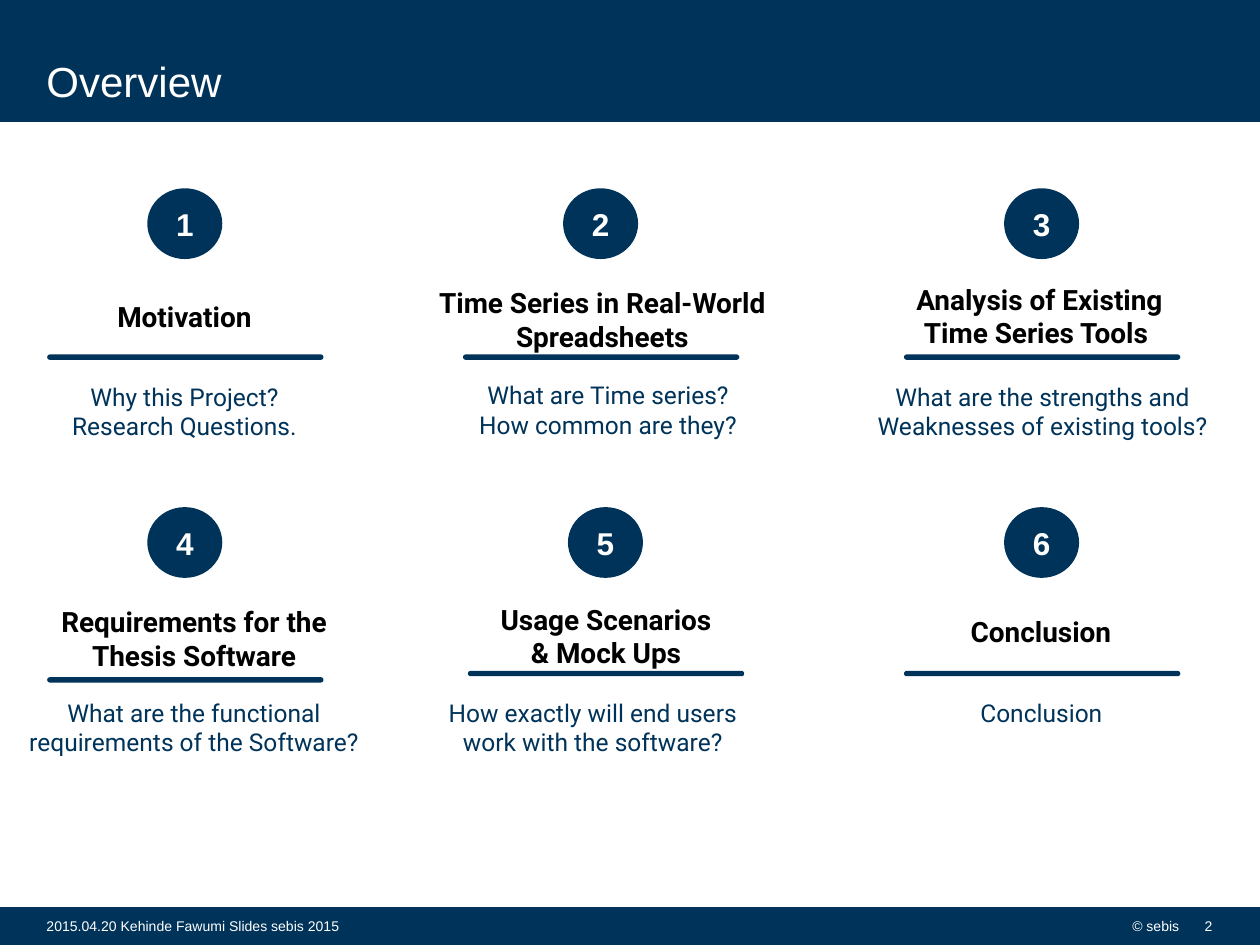
from dataclasses import dataclass

from pptx import Presentation
from pptx.dml.color import RGBColor
from pptx.enum import shapes, text
from pptx.util import Pt


@dataclass(frozen=True)
class Theme:
    navy = RGBColor(0x00, 0x33, 0x59)
    black = RGBColor(0, 0, 0)
    white = RGBColor(255, 255, 255)
    title = dict(name="Arial", size=Pt(24), bold=False, color=white)
    badge = dict(name="Arial", size=Pt(18), bold=True, color=white)
    heading = dict(name="Roboto", size=Pt(16), bold=True, color=black)
    detail = dict(name="Roboto", size=Pt(14), bold=False, color=navy)
    footer = dict(name="Arial", size=Pt(8), bold=False, color=white)


THEME = Theme()
ALIGN = text.PP_ALIGN
ANCHOR = text.MSO_ANCHOR
KIND = shapes.MSO_SHAPE
WIDTH, HEIGHT = 720, 540


@dataclass(frozen=True)
class Topic:
    """Text boxes are (left, top, width), relative to the topic's box."""
    heading: list
    heading_box: tuple
    detail: list
    detail_box: tuple
    rule_top: float = 95


def write(shape, lines, style, align=ALIGN.CENTER):
    frame = shape.text_frame
    for index, line in enumerate(lines):
        paragraph = frame.paragraphs[0] if index == 0 else frame.add_paragraph()
        paragraph.alignment = align
        run = paragraph.add_run()
        run.text = line
        for name, value in style.items():
            if name == "color":
                run.font.color.rgb = value
            else:
                setattr(run.font, name, value)


def add_text(slide, box, lines, style, align=ALIGN.CENTER, **frame_format):
    shape = slide.shapes.add_textbox(*map(Pt, box))
    for name, value in {"word_wrap": True, **frame_format}.items():
        setattr(shape.text_frame, name, value)
    write(shape, lines, style, align)


def add_solid(slide, kind, box, line_width=0.85):
    shape = slide.shapes.add_shape(kind, *map(Pt, box))
    shape.shadow.inherit = False
    shape.fill.solid()
    shape.fill.fore_color.rgb = shape.line.color.rgb = THEME.navy
    shape.line.width = Pt(line_width)
    return shape


def add_header(slide, box, title):
    left, top, width, height = box
    add_solid(slide, KIND.RECTANGLE, box, 1.35)
    add_text(slide, (left + 19.5, top + 3, 593, height - 11.5), [title],
             THEME.title, ALIGN.LEFT, vertical_anchor=ANCHOR.BOTTOM,
             margin_top=0, margin_bottom=0)


def add_footer(slide, box, source, owner, number):
    left, top, width, height = box
    add_solid(slide, KIND.RECTANGLE, box, 1.35)
    parts = [(19.5, 340.5, source, ALIGN.LEFT, True),
             (554.5, 126.5, owner, ALIGN.RIGHT, False),
             (680.5, 19.5, number, ALIGN.RIGHT, False)]
    for offset, part_width, line, align, wrap in parts:
        add_text(slide, (left + offset, top - 1.5, part_width, 23), [line],
                 THEME.footer, align, vertical_anchor=ANCHOR.MIDDLE,
                 word_wrap=wrap)


def add_topic(slide, box, number, topic):
    left, top, width = box

    # Numbered badge
    badge = add_solid(slide, KIND.OVAL, (left + 57.2, top, 42, 39.6))
    for side in ("left", "right", "top", "bottom"):
        setattr(badge.text_frame, f"margin_{side}", 0)
    badge.text_frame.vertical_anchor = ANCHOR.MIDDLE
    write(badge, [str(number)], THEME.badge)

    # Rule under the heading
    rule = add_solid(slide, KIND.ROUNDED_RECTANGLE,
                     (left, top + topic.rule_top, width, 2.2))
    rule.adjustments[0] = 0.5

    # Heading and detail
    for lines, style, (dx, dy, text_width), line_height in (
            (topic.heading, THEME.heading, topic.heading_box, 19.4),
            (topic.detail, THEME.detail, topic.detail_box, 17)):
        height = 7.2 + line_height * len(lines)
        add_text(slide, (left + dx, top + dy, text_width, height), lines, style)


TOPICS = [
    Topic(["Motivation"], (0, 59.8, 156),
          ["Why this Project?", "Research Questions."], (0, 106.6, 156)),
    Topic(["Time Series in Real-World Spreadsheets"], (-31.7, 51.8, 221.8),
          ["What are Time series?", "How common are they?"],
          (-25.2, 105.8, 215.3)),
    Topic(["Analysis of Existing", "Time Series Tools "], (-24.5, 49.7, 203),
          ["What are the strengths and Weaknesses of existing tools?"],
          (-27.4, 106.6, 212.4)),
    Topic(["Requirements for the Thesis Software"], (-21.6, 51.8, 210.2),
          ["What are the functional requirements of the Software?"],
          (-21.6, 105.1, 210.2), 97.2),
    Topic(["Usage Scenarios", "& Mock Ups"], (-13, 50.4, 183),
          ["How exactly will end users work with the software?"],
          (-28, 105.1, 198), 93.6),
    Topic(["Conclusion"], (-33.1, 57.6, 221.8),
          ["Conclusion"], (-7.2, 105.1, 170.6), 93.6),
]
ROWS = [(108, (27.4, 265, 517)), (290.2, (27.4, 267.8, 517))]


def main():
    presentation = Presentation()
    presentation.slide_width, presentation.slide_height = Pt(WIDTH), Pt(HEIGHT)
    slide = presentation.slides.add_slide(presentation.slide_layouts[6])

    add_header(slide, (0, 0.7, WIDTH, 68.6), "Overview")
    boxes = [(left, top, 157) for top, lefts in ROWS for left in lefts]
    for number, (box, topic) in enumerate(zip(boxes, TOPICS), start=1):
        add_topic(slide, box, number, topic)
    add_footer(slide, (0, 519.1, WIDTH, 20.9),
               "2015.04.20 Kehinde Fawumi Slides sebis 2015", "© sebis", "2")

    presentation.save("out.pptx")


if __name__ == "__main__":
    main()
